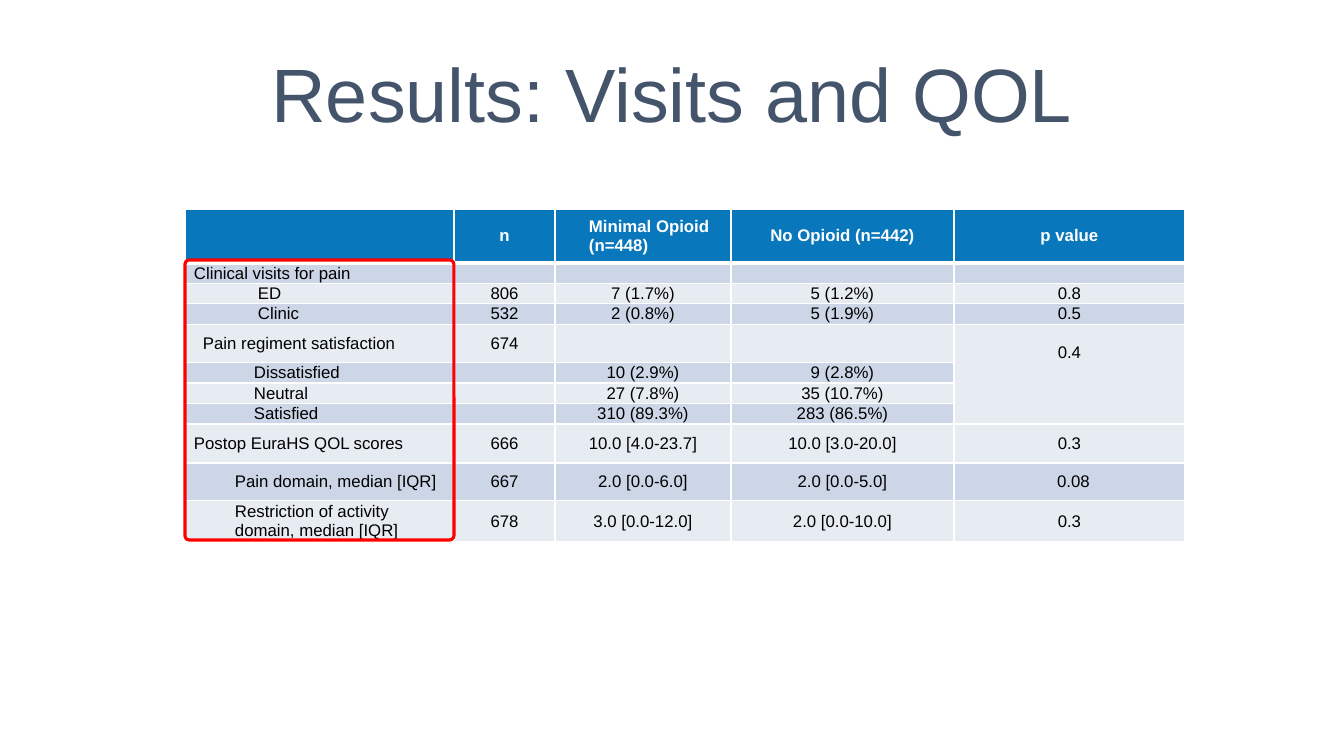
from lxml import etree
from pptx import Presentation
from pptx.dml.color import RGBColor
from pptx.enum.shapes import MSO_SHAPE
from pptx.enum.text import MSO_ANCHOR, PP_ALIGN
from pptx.oxml.ns import qn
from pptx.util import Pt

PX = 914400 / 100.8
LEFT, CENTER = PP_ALIGN.LEFT, PP_ALIGN.CENTER
TOP, MIDDLE = MSO_ANCHOR.TOP, MSO_ANCHOR.MIDDLE
ROUNDED = MSO_SHAPE.ROUNDED_RECTANGLE

WHITE = RGBColor(0xFF, 0xFF, 0xFF)
BLACK = RGBColor(0x00, 0x00, 0x00)
SLATE = RGBColor(0x44, 0x54, 0x6A)
BLUE = RGBColor(0x08, 0x77, 0xBC)
BAND_DARK = RGBColor(0xCC, 0xD6, 0xE7)
BAND_LIGHT = RGBColor(0xE7, 0xEC, 0xF3)
RED = RGBColor(0xFF, 0x00, 0x00)

FONT = "Arial"
TABLE_LEFT, TABLE_TOP = 185, 209
COLUMN_WIDTHS = [269, 101, 176, 223, 231]
HEADER_HEIGHT = 54
HEADER = ["", "n", "Minimal Opioid (n=448)", "No Opioid (n=442)", "p value"]
RESULTS = [
    (20, 9, ["Clinical visits for pain", "", "", "", ""]),
    (20, 73, ["ED", "806", "7 (1.7%)", "5 (1.2%)", "0.8"]),
    (21, 73, ["Clinic", "532", "2 (0.8%)", "5 (1.9%)", "0.5"]),
    (38, 18, ["Pain regiment satisfaction", "674", "", "", "0.4"]),
    (20, 69, ["Dissatisfied", "", "10 (2.9%)", "9 (2.8%)", ""]),
    (20, 69, ["Neutral", "", "27 (7.8%)", "35 (10.7%)", ""]),
    (20, 69, ["Satisfied", "", "310 (89.3%)", "283 (86.5%)", ""]),
    (39, 9, ["Postop EuraHS QOL scores", "666", "10.0 [4.0-23.7]", "10.0 [3.0-20.0]", "0.3"]),
    (38, 50, ["Pain domain, median [IQR]", "667", "2.0 [0.0-6.0]", "2.0 [0.0-5.0]", "0.08"]),
    (41, 50, ["Restriction of activity domain, median [IQR]", "678",
              "3.0 [0.0-12.0]", "2.0 [0.0-10.0]", "0.3"]),
]


def px(length):
    return round(length * PX)


def add_span(para, text, size, color, bold=False):
    span = para.add_run()
    span.text = text
    span.font.name = FONT
    span.font.size = Pt(size)
    span.font.bold = bold
    span.font.color.rgb = color


def add_title(page, text):
    title = page.shapes.title
    title.left, title.top, title.width, title.height = 0, px(25), px(1344), px(146)
    title.text_frame.vertical_anchor = MIDDLE
    para = title.text_frame.paragraphs[0]
    para.alignment = CENTER
    para.line_spacing = 0.9
    add_span(para, text, 54, SLATE)


def set_borders(cell, top=1, bottom=1):
    properties = cell._tc.get_or_add_tcPr()
    for side, points in (("L", 1), ("R", 1), ("T", top), ("B", bottom)):
        line = etree.SubElement(properties, qn(f"a:ln{side}"), w=str(Pt(points)))
        fill = etree.SubElement(line, qn("a:solidFill"))
        etree.SubElement(fill, qn("a:srgbClr"), val=str(WHITE))


def fill_cell(cell, text, fill, color, bold=False, align=CENTER, indent=0):
    cell.margin_left = px(indent)
    cell.margin_right = cell.margin_top = cell.margin_bottom = 0
    cell.vertical_anchor = MIDDLE
    cell.fill.solid()
    cell.fill.fore_color.rgb = fill
    para = cell.text_frame.paragraphs[0]
    para.alignment = align
    if text:
        add_span(para, text, 12, color, bold)
    else:
        etree.SubElement(para._p, qn("a:endParaRPr"), sz="1200")


def add_results_table(page):
    heights = [HEADER_HEIGHT] + [height for height, _, _ in RESULTS]
    frame = page.shapes.add_table(
        len(heights), len(COLUMN_WIDTHS), px(TABLE_LEFT), px(TABLE_TOP),
        px(sum(COLUMN_WIDTHS)), px(sum(heights)))
    table = frame.table
    for column, width in zip(table.columns, COLUMN_WIDTHS):
        column.width = px(width)
    for row, height in zip(table.rows, heights):
        row.height = px(height)

    for index, text in enumerate(HEADER):
        cell = table.cell(0, index)
        set_borders(cell, bottom=3)
        fill_cell(cell, text, BLUE, WHITE, bold=True)
    minimal_opioid = table.cell(0, 2)
    minimal_opioid.margin_left = px(34)
    minimal_opioid.text_frame.paragraphs[0].alignment = LEFT

    for number, (_, indent, texts) in enumerate(RESULTS, start=1):
        band = BAND_DARK if number % 2 else BAND_LIGHT
        for index, text in enumerate(texts):
            cell = table.cell(number, index)
            set_borders(cell, top=3 if number == 1 else 1)
            if index == 0:
                fill_cell(cell, text, band, BLACK, align=LEFT, indent=indent)
                cell.margin_right = px(8)
            else:
                fill_cell(cell, text, band, BLACK)

    satisfaction_p = table.cell(4, 4)
    satisfaction_p.merge(table.cell(7, 4))
    satisfaction_p.vertical_anchor = TOP
    satisfaction_p.margin_top = px(19)
    table.cell(9, 4).margin_left = px(8)


def add_highlight(page, left, top, width, height):
    box = page.shapes.add_shape(ROUNDED, px(left), px(top), px(width), px(height))
    box.adjustments[0] = 0.016
    box.shadow.inherit = False
    box.fill.background()
    box.line.color.rgb = RED
    box.line.width = Pt(2.25)


def main():
    deck = Presentation()
    deck.slide_width, deck.slide_height = px(1344), px(756)
    page = deck.slides.add_slide(deck.slide_layouts[5])
    add_title(page, "Results: Visits and QOL")
    add_results_table(page)
    add_highlight(page, TABLE_LEFT, 260, COLUMN_WIDTHS[0], 280)
    deck.save("out.pptx")


if __name__ == "__main__":
    main()
